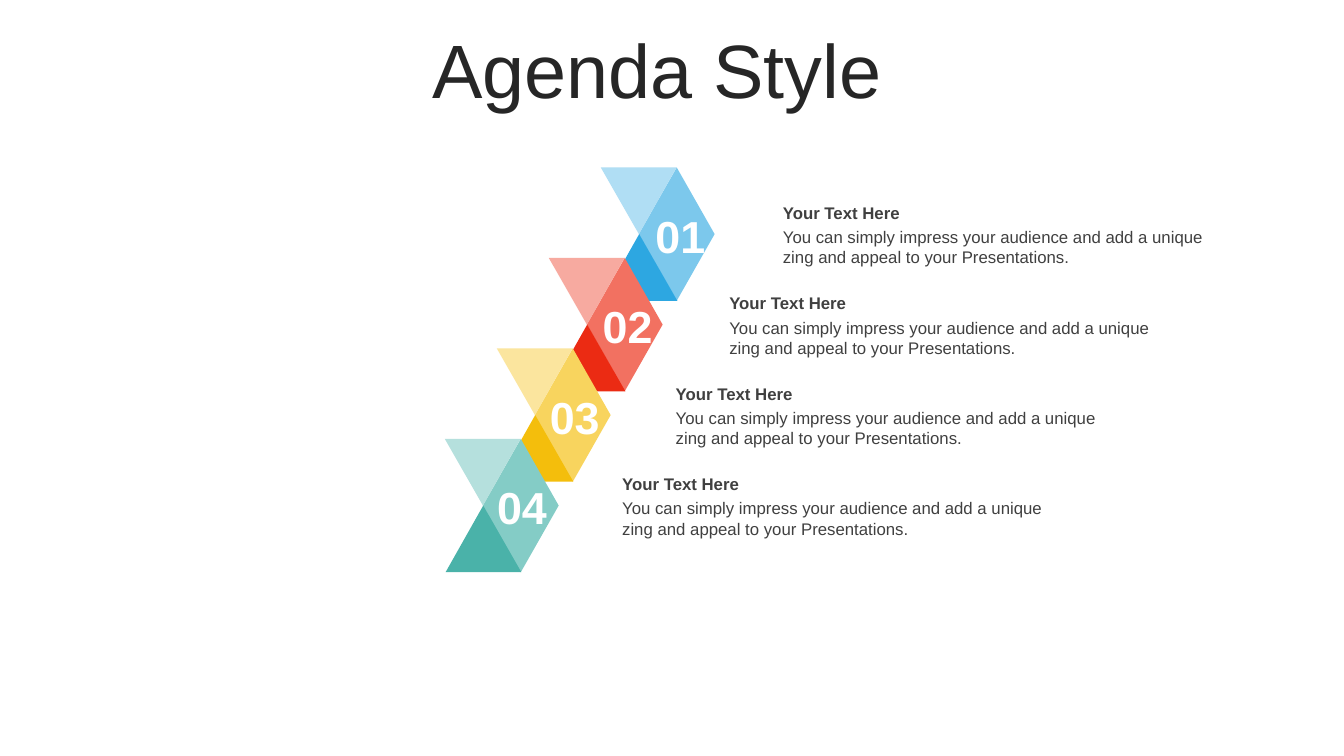
from pptx import Presentation
from pptx.dml.color import RGBColor as RGB
from pptx.enum.shapes import MSO_SHAPE as SHAPE
from pptx.enum.text import MSO_ANCHOR as ANCHOR, MSO_AUTO_SIZE as FIT, PP_ALIGN as ALIGN
from pptx.util import Cm, Pt

COLORS = {
    "title": "262626", "text": "404040", "number": "FFFFFF",
    # diamond, upper triangle, lower triangle
    "blue": ("7CC8EC", "B0DEF4", "2DA7E1"),
    "red": ("F27161", "F7AAA0", "EB2B13"),
    "yellow": ("F8D45E", "FBE59E", "F4BE0C"),
    "teal": ("84CCC6", "B5E0DD", "4AB2A9"),
}
STEPS = ("blue", "red", "yellow", "teal")
HEADING = "Your Text Here"
BODY = "You can simply impress your audience and add a unique zing and appeal to your Presentations."
ROW = 2.28  # vertical distance between agenda items


class Deck:
    font = "Arial"

    def __init__(self, prs):
        self.s = prs.slides.add_slide(prs.slide_layouts[6])

    def group(self):
        return self.s.shapes.add_group_shape().shapes

    def shape(self, shapes, kind, box, color, rotation=0):
        sp = shapes.add_shape(kind, *map(Cm, box))
        sp.shadow.inherit = False
        sp.fill.solid()
        sp.fill.fore_color.rgb = RGB.from_string(color)
        sp.line.fill.background()
        sp.rotation = rotation
        if kind == SHAPE.ISOSCELES_TRIANGLE:
            sp.adjustments[0] = 0.497
        return sp

    def text(self, shapes, text, box, color, size, bold=False, align=ALIGN.LEFT, **frame):
        tf = shapes.add_textbox(*map(Cm, box)).text_frame
        for name, value in {"word_wrap": True, "auto_size": FIT.SHAPE_TO_FIT_TEXT, **frame}.items():
            setattr(tf, name, value)
        p = tf.paragraphs[0]
        p.alignment = align
        r = p.add_run()
        r.text = text
        for name, value in {"name": self.font, "size": Pt(size), "bold": bold}.items():
            setattr(r.font, name, value)
        r.font.color.rgb = RGB.from_string(COLORS[color])

    def arrow(self, x, y, colors):
        shapes = self.group()
        w, h = 1.91, 1.68
        diamond, upper, lower = colors
        self.shape(shapes, SHAPE.DIAMOND, (x, y, w, 2 * h), diamond)
        self.shape(shapes, SHAPE.ISOSCELES_TRIANGLE, (x - 0.96, y, w, h), upper, 180)
        self.shape(shapes, SHAPE.ISOSCELES_TRIANGLE, (x - 0.94, y + h, w, h), lower)

    def entry(self, x, y):
        shapes = self.group()
        self.text(shapes, HEADING, (x, y, 11.99, 0.76), "text", 12, bold=True)
        self.text(shapes, BODY, (x, y + 0.61, 11.99, 1.27), "text", 12)

    def number(self, x, y, n):
        margins = {f"margin_{side}": 0 for side in ("left", "top", "right", "bottom")}
        self.text(self.s.shapes, f"{n:02}", (x, y, 1.57, 1.37), "number", 32,
                  bold=True, align=ALIGN.CENTER, **margins)


def main():
    prs = Presentation()
    prs.slide_width, prs.slide_height = Cm(33.87), Cm(19.05)
    deck = Deck(prs)

    # Title
    deck.text(deck.s.shapes, "Agenda Style", (10.64, 0.43, 23.22, 2.57), "title", 54,
              vertical_anchor=ANCHOR.MIDDLE)

    # Staircase of folded arrows, each overlapping the one before
    for i, step in enumerate(STEPS):
        deck.arrow(16.1 - 1.31 * i, 4.22 + ROW * i, COLORS[step])

    # Agenda texts and numbers
    for i in range(len(STEPS)):
        deck.entry(19.48 - 1.35 * i, 4.98 + ROW * i)
        deck.number(16.36 - 1.33 * i, 5.26 + ROW * i, i + 1)

    prs.save("out.pptx")


if __name__ == "__main__":
    main()
